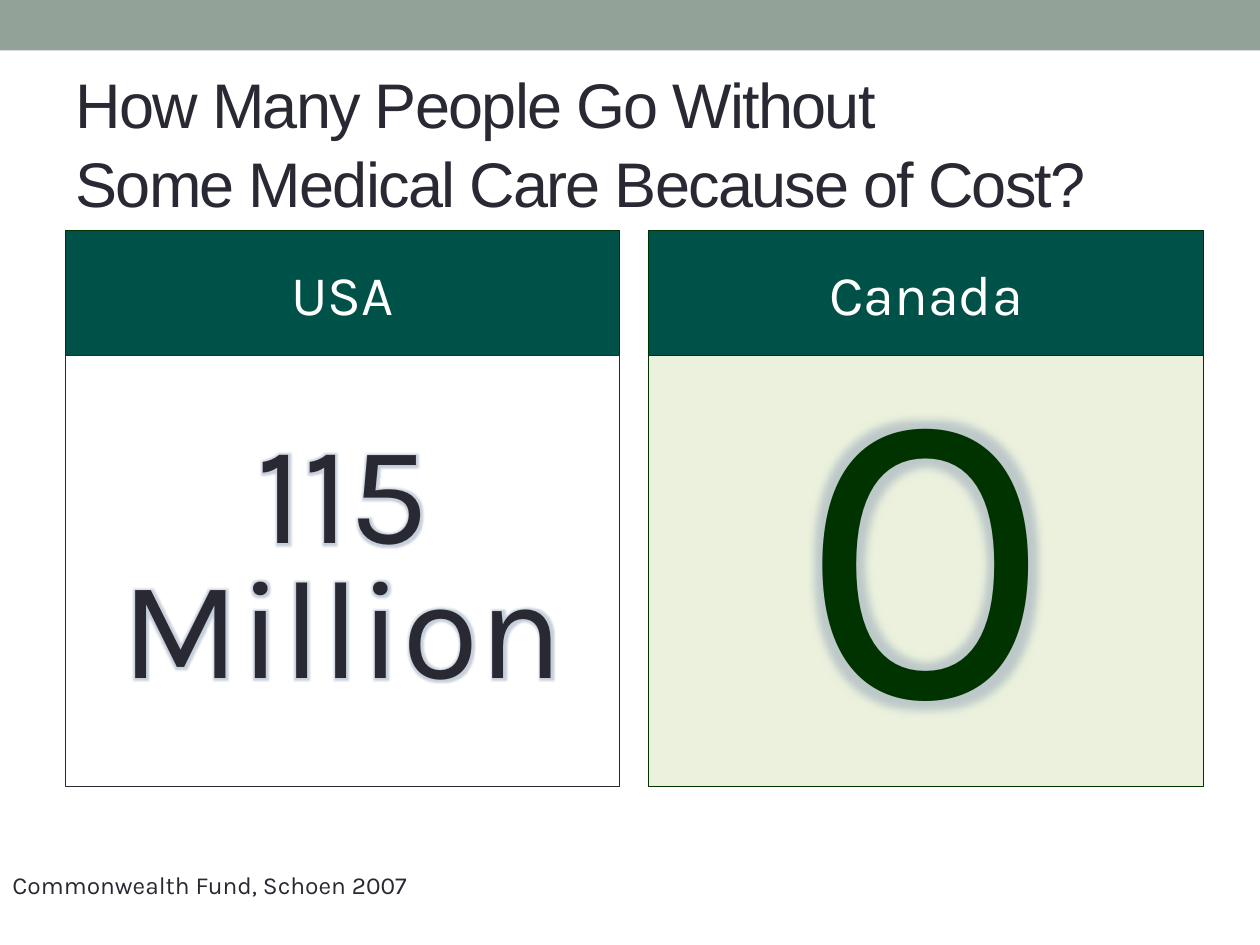
from lxml import etree
from pptx import Presentation
from pptx.dml.color import RGBColor
from pptx.enum.shapes import MSO_SHAPE
from pptx.enum.text import MSO_ANCHOR, MSO_AUTO_SIZE, PP_ALIGN
from pptx.oxml.ns import qn
from pptx.util import Inches, Pt

INK, GREEN, DARK_GREEN = "292934", "005148", "003300"


def color(value):
    return RGBColor.from_string(value)


def style_font(paragraph, name, size, value):
    font = paragraph.font
    font.name, font.size = name, Pt(size)
    font.color.rgb = color(value)


def add_glow(paragraph, radius):
    properties = paragraph.runs[0].font._element
    effects = etree.SubElement(properties, qn("a:effectLst"))
    glow = etree.SubElement(effects, qn("a:glow"), rad=str(Pt(radius)))
    tint = etree.SubElement(glow, qn("a:srgbClr"), val="8FA0B5")
    etree.SubElement(tint, qn("a:alpha"), val="50000")


def add_panel(page, left, top, width, height, fill, line=None):
    box = page.shapes.add_shape(
        MSO_SHAPE.RECTANGLE, Inches(left), Inches(top), Inches(width), Inches(height))
    box.shadow.inherit = False
    box.fill.solid()
    box.fill.fore_color.rgb = color(fill)
    if line:
        box.line.color.rgb = color(line)
        box.line.width = Pt(0.75)
    else:
        box.line.fill.background()
    return box


def write_centered(box, text, size, value, anchor=MSO_ANCHOR.MIDDLE):
    box.text_frame.word_wrap = True
    box.text_frame.vertical_anchor = anchor
    paragraph = box.text_frame.paragraphs[0]
    paragraph.text = text
    paragraph.alignment = PP_ALIGN.CENTER
    style_font(paragraph, "Karla", size, value)
    return paragraph


def add_title(page, left, top, width, height):
    title = page.shapes.title
    title.left, title.top = Inches(left), Inches(top)
    title.width, title.height = Inches(width), Inches(height)
    frame = title.text_frame
    frame.auto_size = MSO_AUTO_SIZE.NONE
    frame.vertical_anchor = MSO_ANCHOR.MIDDLE
    paragraph = frame.paragraphs[0]
    paragraph.text = "How Many People Go Without \vSome Medical Care Because of Cost?"
    paragraph.alignment = PP_ALIGN.LEFT
    paragraph.line_spacing = 1.04
    style_font(paragraph, "Arial", 36, INK)
    for span in paragraph.runs:
        span.font._element.set("spc", "-100")


def add_country(page, left, top, width, country, figure, size, ink, fill, line,
                anchor, spacing, glow):
    header = add_panel(page, left, top, width, 1, GREEN, DARK_GREEN)
    write_centered(header, country, 32, "FFFFFF")
    body = add_panel(page, left, top + 0.99, width, 3.42, fill, line)
    paragraph = write_centered(body, figure, size, ink, anchor)
    paragraph.line_spacing = spacing
    add_glow(paragraph, glow)


def add_source(page, left, top, width, height):
    box = page.shapes.add_textbox(Inches(left), Inches(top), Inches(width), Inches(height))
    box.text_frame.word_wrap = True
    paragraph = box.text_frame.paragraphs[0]
    paragraph.text = "Commonwealth Fund, Schoen 2007"
    style_font(paragraph, "Karla", 14, INK)


def main():
    deck = Presentation()
    deck.slide_width, deck.slide_height = Inches(10), Inches(7.5)
    page = deck.slides.add_slide(deck.slide_layouts[5])
    add_panel(page, 0, 0, 10, 0.4, "93A299")
    add_title(page, 0.5, 0.58, 9, 1.08)
    add_country(page, 0.52, 1.83, 4.4, "USA", "115 Million", 80, INK,
                "FFFFFF", INK, MSO_ANCHOR.MIDDLE, 0.8, 4)
    add_country(page, 5.15, 1.83, 4.4, "Canada", "0", 239, DARK_GREEN,
                "EBF1DD", DARK_GREEN, MSO_ANCHOR.BOTTOM, 1.0, 8)
    add_source(page, 0, 6.86, 4.89, 0.34)
    deck.save("out.pptx")


if __name__ == "__main__":
    main()
